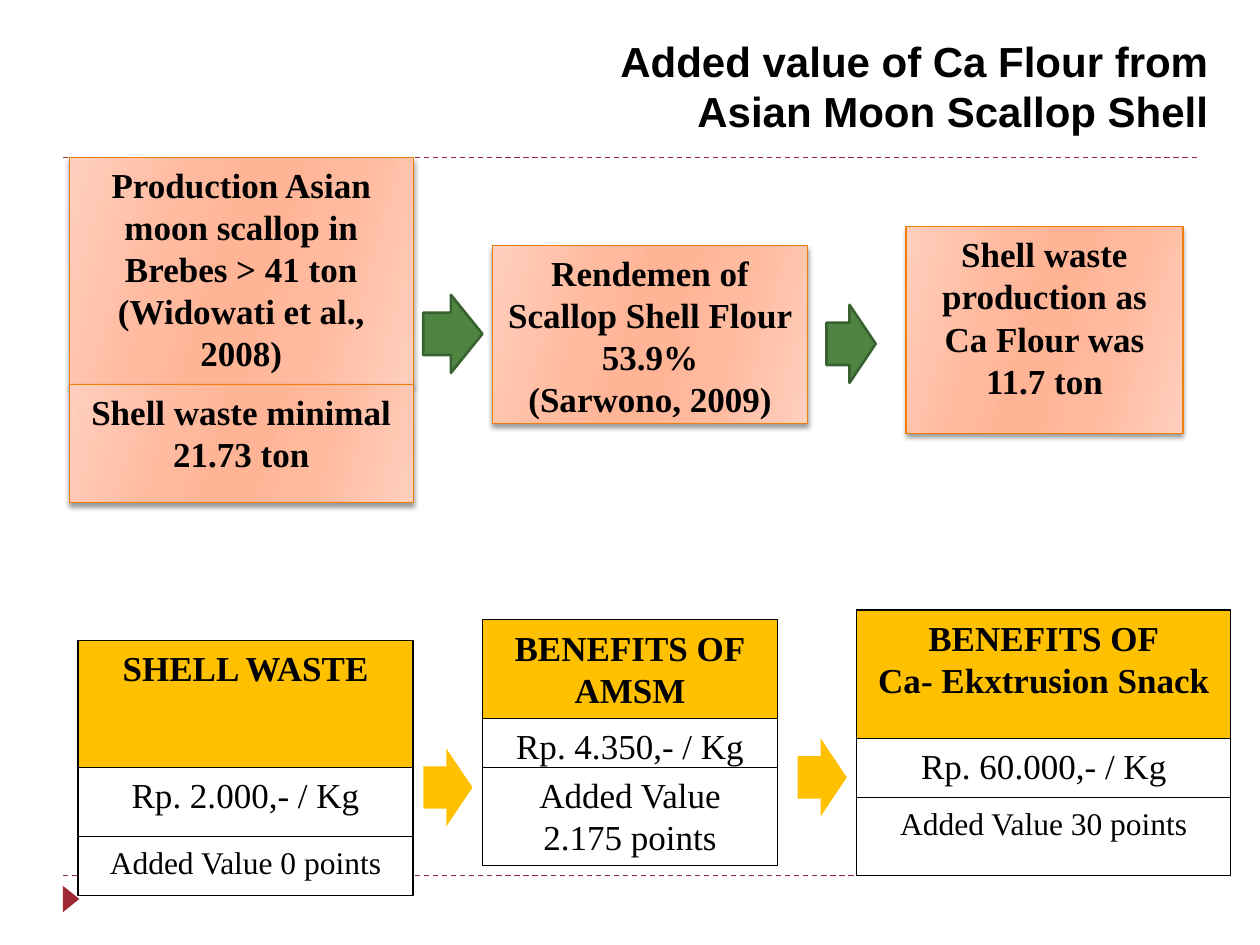
from lxml.etree import SubElement as Sub
from pptx import Presentation
from pptx.dml.color import RGBColor as Rgb
from pptx.enum.dml import MSO_LINE as Dash
from pptx.enum.shapes import MSO_CONNECTOR as Conn, MSO_SHAPE as Kind
from pptx.enum.text import MSO_ANCHOR as Anchor, MSO_AUTO_SIZE as Fit, PP_ALIGN as Align
from pptx.oxml.ns import qn
from pptx.util import Pt

HEX = {
    "black": "000000", "white": "FFFFFF", "wine": "9F2936", "orange": "F07F09",
    "green": "4E8542", "moss": "3A6231", "gold": "FFC000",
    "pale": "FFCFBE", "peach": "FFBBA0", "salmon": "FFB496",
}
SERIF = "Times New Roman"
TITLE = "Added value of Ca Flour from Asian Moon Scallop Shell"
RULES = [500.4, 90]
STOPS = [(0, "pale"), (30, "peach"), (45, "salmon"),
         (55, "salmon"), (73, "peach"), (100, "pale")]
STEPS = [
    ((39.6, 90, 196.6, 130.3),
     "Production Asian moon scallop in Brebes > 41 ton\n(Widowati et al., 2008)"),
    ((39.6, 219.6, 196.6, 67.7), "Shell waste minimal 21.73 ton"),
    ((281.5, 140.4, 180, 101.5),
     "Rendemen of Scallop Shell Flour 53.9%\n(Sarwono, 2009)"),
    ((517.7, 129.6, 158.4, 118.1), "Shell waste production as Ca Flour was 11.7 ton"),
]
STACKS = [
    (44.6, 191.5, [
        (365.8, 73.4, "SHELL WASTE", 20),
        (438.5, 39.6, "Rp. 2.000,- / Kg", 20),
        (478.1, 33.8, "Added Value 0 points", 18)]),
    (275.8, 168.5, [
        (354.2, 56.2, "BENEFITS OF\nAMSM", 20),
        (410.4, 28.1, "Rp. 4.350,- / Kg", 20),
        (438.5, 56.2, "Added Value\v2.175 points", 20)]),
    (489.6, 213.8, [
        (348.5, 73.4, "BENEFITS OF\nCa- Ekxtrusion Snack", 20),
        (421.9, 39.6, "Rp. 60.000,- / Kg", 20),
        (455.8, 44.6, "Added Value 30 points", 18)]),
]
ARROWS = [
    (241.9, 168.5, 33.8, "green", "moss"),
    (472.3, 174.2, 28.1, "green", "moss"),
    (241.9, 427.7, 28.1, "gold", None),
    (455.8, 421.9, 28.1, "gold", None),
]


def tint(name):
    return Rgb.from_string(HEX[name])


def write(shape, text, size, bold, font=SERIF, align=Align.CENTER):
    frame = shape.text_frame
    frame.text = text
    frame.word_wrap = True
    frame.auto_size = Fit.NONE
    frame.vertical_anchor = Anchor.TOP
    for para in frame.paragraphs:
        para.alignment = align
        for run in para.runs:
            run.font.name, run.font.size, run.font.bold = font, Pt(size), bold
            run.font.color.rgb = tint("black")


def draw(slide, kind, spot, fill, line=None, width=0.75):
    shape = slide.shapes.add_shape(kind, *map(Pt, spot))
    shape.shadow.inherit = False
    if fill:
        shape.fill.solid()
        shape.fill.fore_color.rgb = tint(fill)
    if line:
        shape.line.color.rgb = tint(line)
        shape.line.width = Pt(width)
    else:
        shape.line.fill.background()
    return shape


def blend(shape):
    shape.fill.gradient()
    grad = shape.element.spPr.find(qn("a:gradFill"))
    for part in list(grad):
        grad.remove(part)
    stops = Sub(grad, qn("a:gsLst"))
    for spot, name in STOPS:
        stop = Sub(stops, qn("a:gs"), pos=str(spot * 1000))
        Sub(stop, qn("a:srgbClr"), val=HEX[name])
    Sub(grad, qn("a:lin"), ang=str(16 * 60000), scaled="0")


def shade(shape):
    effects = shape.element.spPr.find(qn("a:effectLst"))
    shadow = Sub(effects, qn("a:outerShdw"), blurRad=str(Pt(3)), dist=str(Pt(2)),
                 dir=str(90 * 60000), rotWithShape="0")
    color = Sub(shadow, qn("a:srgbClr"), val=HEX["black"])
    Sub(color, qn("a:alpha"), val="40000")


def main():
    """Build the slide on the added value of scallop shell flour."""
    deck = Presentation()
    deck.slide_width, deck.slide_height = Pt(720), Pt(540)
    slide = deck.slides.add_slide(deck.slide_layouts[5])

    title = slide.shapes.title
    title.left, title.top, title.width, title.height = map(Pt, (315.4, 16.6, 382.3, 61.9))
    title.fill.solid()
    title.fill.fore_color.rgb = tint("white")
    write(title, TITLE, 24, True, "Arial", Align.RIGHT)

    for y in RULES:
        rule = slide.shapes.add_connector(Conn.STRAIGHT, Pt(36), Pt(y), Pt(684), Pt(y))
        rule.line.color.rgb = tint("wine")
        rule.line.width = Pt(0.75)
        rule.line.dash_style = Dash.DASH
        Sub(rule.element.spPr, qn("a:effectLst"))
    mark = draw(slide, Kind.ISOSCELES_TRIANGLE, (33.1, 509, 15.1, 9.4), "wine")
    mark.rotation = 90

    for spot, text in STEPS:
        box = draw(slide, Kind.RECTANGLE, spot, None, "orange")
        blend(box)
        shade(box)
        write(box, text, 20, True)

    for x, width, rows in STACKS:
        for i, (y, height, text, size) in enumerate(rows):
            head = i == 0
            cell = draw(slide, Kind.RECTANGLE, (x, y, width, height),
                        "gold" if head else "white", "black")
            write(cell, text, size, head)

    for x, y, width, fill, line in ARROWS:
        arrow = draw(slide, Kind.RIGHT_ARROW, (x, y, width, 44.6), fill, line, 1.5)
        arrow.adjustments[0], arrow.adjustments[1] = 0.543, 0.532

    deck.save("out.pptx")


if __name__ == "__main__":
    main()
